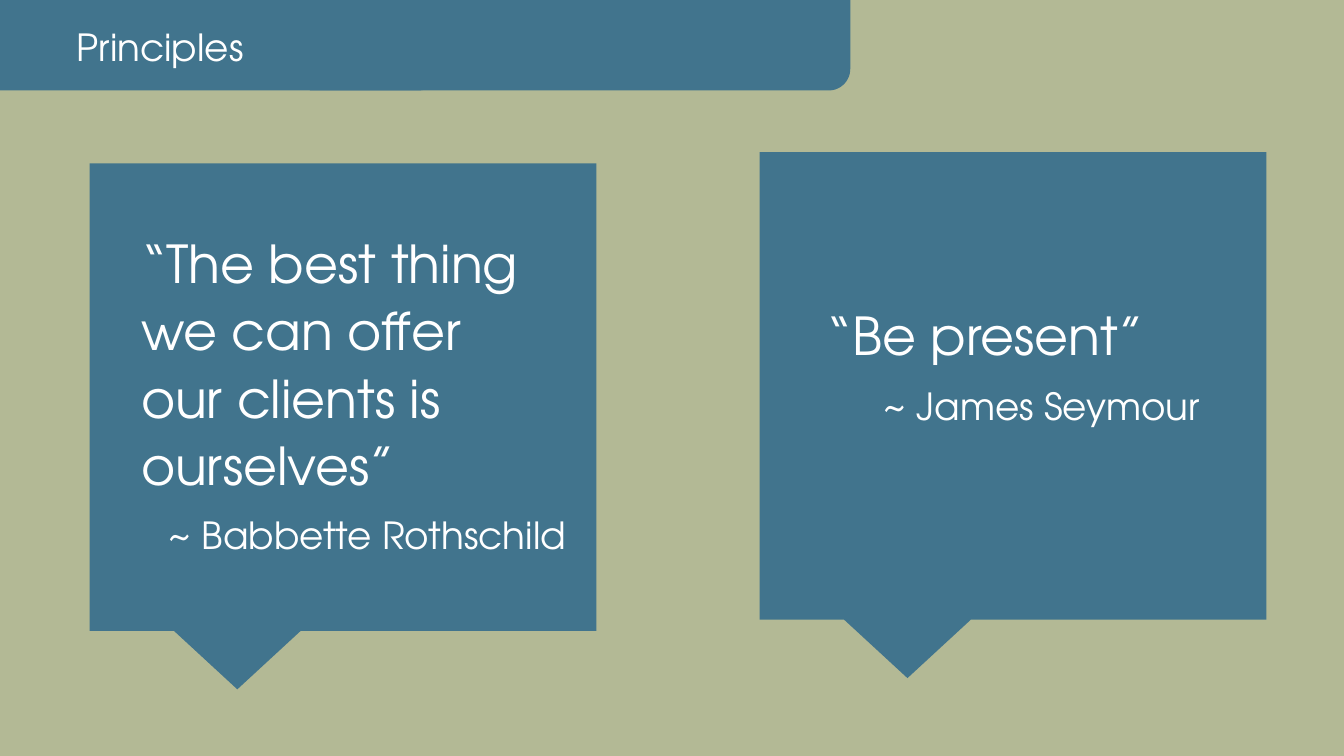
import math

from pptx import Presentation, util as u
from pptx.dml.color import RGBColor
from pptx.enum import shapes, text

COLORS = {"background": "B3B995", "panel": "41748D", "text": "FFFFFF"}
FONT = "TeX Gyre Adventor"


def fill_plain(shape):
    """Give the shape the panel colour, with no outline or shadow."""
    shape.shadow.inherit = False
    shape.fill.solid()
    shape.fill.fore_color.rgb = RGBColor.from_string(COLORS["panel"])
    shape.line.fill.background()


def write(paragraph, words, size, align=text.PP_ALIGN.LEFT, spacing=None, before=0):
    paragraph.text = words
    paragraph.alignment = align
    paragraph.space_before = u.Pt(before)
    if spacing:
        paragraph.line_spacing = u.Pt(spacing)
    for run in paragraph.runs:
        run.font.name = FONT
        run.font.size = u.Pt(size)
        run.font.color.rgb = RGBColor.from_string(COLORS["text"])


presentation = Presentation()
presentation.slide_width = u.Pt(720)
presentation.slide_height = u.Pt(405)
slide = presentation.slides.add_slide(presentation.slide_layouts[6])
slide.background.fill.solid()
slide.background.fill.fore_color.rgb = RGBColor.from_string(COLORS["background"])

# Header: two overlapping tabs, each with a rounded lower right corner
TAB_TOP, TAB_BOTTOM, TAB_WIDTH, RADIUS = -17.5, 48.5, 289.5, 11.5
for left in (-54, 166):
    right = left + TAB_WIDTH
    corner = [
        (right - RADIUS + RADIUS * math.cos(math.radians(angle)),
         TAB_BOTTOM - RADIUS + RADIUS * math.sin(math.radians(angle)))
        for angle in range(0, 91, 6)
    ]
    outline = [(right, TAB_TOP), *corner, (left, TAB_BOTTOM)]
    builder = slide.shapes.build_freeform(u.Pt(left), u.Pt(TAB_TOP))
    builder.add_line_segments([(u.Pt(x), u.Pt(y)) for x, y in outline], close=True)
    fill_plain(builder.convert_to_shape())

title = slide.shapes.add_textbox(u.Pt(34), u.Pt(0), u.Pt(474.5), u.Pt(40.5))
title.text_frame.word_wrap = True
title.text_frame.vertical_anchor = text.MSO_ANCHOR.BOTTOM
write(title.text_frame.paragraphs[0], "Principles", 20)

# Each quote: callout left and top, text box, words, speaker
quotes = [
    ((407, 81.5), (435.5, 156.5, 214.5, 113), "“Be present”", "~ James Seymour"),
    ((48, 87.5), (68.5, 118, 242, 250.5),
     "“The best thing we can offer\vour clients is ourselves”", "~ Babbette Rothschild"),
]
for (left, top), box, words, speaker in quotes:
    callout = slide.shapes.add_shape(
        shapes.MSO_SHAPE.RECTANGULAR_CALLOUT,
        u.Pt(left), u.Pt(top), u.Pt(271.5), u.Pt(250.5))
    fill_plain(callout)
    frame = slide.shapes.add_textbox(*map(u.Pt, box)).text_frame
    frame.word_wrap = True
    write(frame.paragraphs[0], words, 28, spacing=36)
    write(frame.add_paragraph(), speaker, 20,
          align=text.PP_ALIGN.RIGHT, spacing=27, before=6)

presentation.save("out.pptx")
